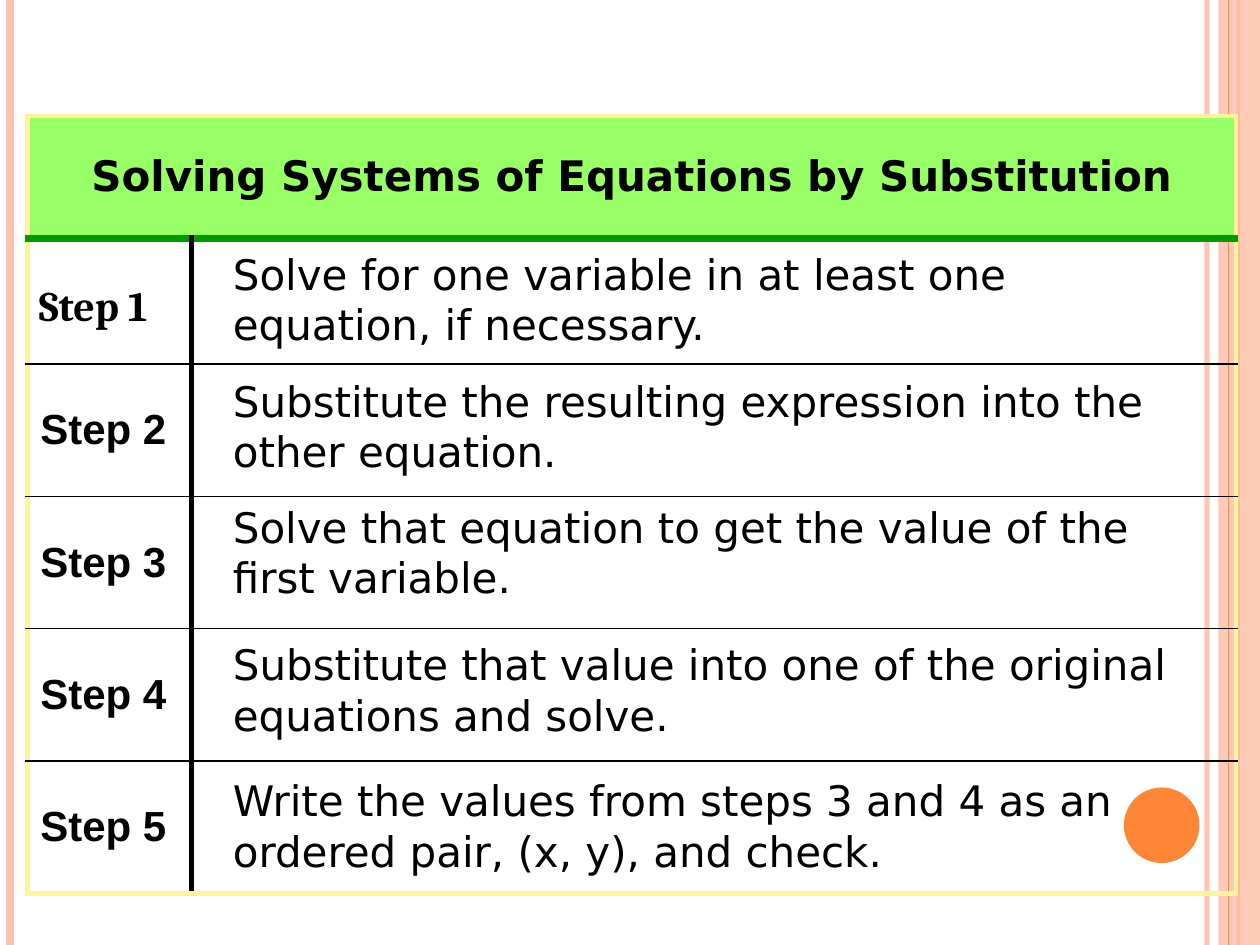
from dataclasses import dataclass

from lxml import etree
from pptx import Presentation
from pptx.dml.color import RGBColor
from pptx.enum.shapes import MSO_CONNECTOR, MSO_SHAPE
from pptx.enum.text import MSO_ANCHOR, MSO_AUTO_SIZE, PP_ALIGN
from pptx.oxml.ns import qn
from pptx.util import Emu, Pt

STRAIGHT = MSO_CONNECTOR.STRAIGHT
RECTANGLE, OVAL = MSO_SHAPE.RECTANGLE, MSO_SHAPE.OVAL
MIDDLE, CENTER = MSO_ANCHOR.MIDDLE, PP_ALIGN.CENTER
GROW = MSO_AUTO_SIZE.SHAPE_TO_FIT_TEXT
PX = 9144
SLIDE_W, SLIDE_H = 1000, 750


@dataclass(frozen=True)
class Theme:
    """Colours, fonts and type size of the slide."""
    ink: str = "000000"
    peach: str = "FEC3AE"
    orange: str = "FE8637"
    header: str = "99FF66"
    frame: str = "FFF39D"
    rule: str = "009900"
    body_font: str = "DejaVu Sans"
    step_font: str = "Arial"
    first_step_font: str = "Cambria"
    size: int = 24


THEME = Theme()
HEADING = "Solving Systems of Equations by Substitution"
FIRST_STEP = "Step 1"
LATER_STEPS = ["Step 2", "Step 3", "Step 4", "Step 5"]
INSTRUCTIONS = [
    (192, 739, "Solve for one variable in at least one equation, if necessary."),
    (293, 768, "Substitute the resulting expression into the other equation."),
    (393, 739, "Solve that equation to get the value of the first variable."),
    (502, 768, "Substitute that value into one of the original equations and solve."),
    (610, 768, "Write the values from steps 3 and 4 as an ordered pair, (x, y), and check."),
]
COLUMNS = [130, 829]
ROWS = [97, 100] + [105] * 4


def px(*lengths):
    """Turn px lengths into EMU."""
    return [Emu(length * PX) for length in lengths]


def set_alpha(fill_parent, percent):
    """Make the solid colour under an element partly transparent."""
    colour = next(fill_parent.iter(qn("a:srgbClr")))
    etree.SubElement(colour, qn("a:alpha"), val=str(percent * 1000))


def add_stripe(slide, x, top, height, colour, width, alpha=100):
    """Draw one vertical line."""
    stripe = slide.shapes.add_connector(STRAIGHT, *px(x, top, x, top + height))
    stripe.line.color.rgb = RGBColor.from_string(colour)
    stripe.line.width = Pt(width)
    properties = stripe.line._get_or_add_ln().getparent()
    etree.SubElement(properties, qn("a:effectLst"))
    if alpha < 100:
        set_alpha(properties, alpha)


def add_solid(slide, kind, box, colour, alpha=100):
    """Draw one filled shape with no outline."""
    solid = slide.shapes.add_shape(kind, *px(*box))
    solid.shadow.inherit = False
    solid.fill.solid()
    solid.fill.fore_color.rgb = RGBColor.from_string(colour)
    solid.line.fill.background()
    if alpha < 100:
        set_alpha(solid.fill._xPr, alpha)


def add_backdrop(slide, box):
    """Draw the side stripes and the disc."""
    left, top, width, height = box
    right = left + width
    add_stripe(slide, right - 42, top, height, THEME.peach, 3, 93)
    add_stripe(slide, left + 8, top, height, THEME.peach, 4.5)
    add_stripe(slide, right - 17, top, height, THEME.orange, 1.5)
    add_solid(slide, RECTANGLE, (right - 33, top, 33, height), THEME.peach, 87)
    add_stripe(slide, right - 25, top, height, THEME.orange, 0.75)
    add_solid(slide, OVAL, (right - 108, top + 625, 60, 60), THEME.orange)


def write(frame, text, font, bold=False):
    """Add one run to the first paragraph and return the paragraph."""
    paragraph = frame.paragraphs[0]
    run = paragraph.add_run()
    run.text = text
    run.font.name = font
    run.font.size = Pt(THEME.size)
    run.font.bold = bold
    run.font.color.rgb = RGBColor.from_string(THEME.ink)
    return paragraph


def set_borders(cell, row, column):
    """Give a cell its frame, divider and row rules."""
    frame, divider = (THEME.frame, 3), (THEME.ink, 3)
    levels = [frame, (THEME.rule, 4.5)] + [(THEME.ink, 1)] * (len(ROWS) - 2) + [frame]
    inner = divider if row else frame
    sides = {
        "a:lnL": inner if column else frame,
        "a:lnR": frame if column else inner,
        "a:lnT": levels[row],
        "a:lnB": levels[row + 1],
    }
    properties = cell._tc.get_or_add_tcPr()
    for tag, (colour, width) in sides.items():
        border = etree.SubElement(properties, qn(tag), w=str(Pt(width)))
        fill = etree.SubElement(border, qn("a:solidFill"))
        etree.SubElement(fill, qn("a:srgbClr"), val=colour)


def add_steps_table(slide, box):
    """Draw the framed grid with its heading and step labels."""
    table = slide.shapes.add_table(len(ROWS), len(COLUMNS), *px(*box)).table
    table.first_row = table.horz_banding = False
    for column, width in zip(table.columns, px(*COLUMNS)):
        column.width = width
    for row, height in zip(table.rows, px(*ROWS)):
        row.height = height
    for row in range(len(ROWS)):
        for column in range(len(COLUMNS)):
            cell = table.cell(row, column)
            set_borders(cell, row, column)
            cell.fill.background()
            cell.vertical_anchor = MIDDLE
    heading = table.cell(0, 0)
    heading.merge(table.cell(0, 1))
    heading.fill.solid()
    heading.fill.fore_color.rgb = RGBColor.from_string(THEME.header)
    write(heading.text_frame, HEADING, THEME.body_font, True).alignment = CENTER
    for row, step in enumerate(LATER_STEPS, start=2):
        write(table.cell(row, 0).text_frame, step, THEME.step_font, True)


def add_label(slide, box, text, font, bold=False, wrap=True):
    """Place one text box."""
    frame = slide.shapes.add_textbox(*px(*box)).text_frame
    frame.word_wrap = wrap
    frame.auto_size = GROW
    write(frame, text, font, bold)


def add_instructions(slide, box):
    """Place the first step label and the five instructions."""
    left, top = box[:2]
    add_label(slide, (left - 1, top + 125, 120, 50), FIRST_STEP,
              THEME.first_step_font, True, False)
    for y, width, instruction in INSTRUCTIONS:
        add_label(slide, (left + 153, top + y - 92, width, 90), instruction, THEME.body_font)


def main():
    """Build and save the slide."""
    deck = Presentation()
    deck.slide_width, deck.slide_height = px(SLIDE_W, SLIDE_H)
    slide = deck.slides.add_slide(deck.slide_layouts[6])
    steps_box = (22, 92, sum(COLUMNS), sum(ROWS))
    add_backdrop(slide, (0, 0, SLIDE_W, SLIDE_H))
    add_steps_table(slide, steps_box)
    add_instructions(slide, steps_box)
    deck.save("out.pptx")


if __name__ == "__main__":
    main()
